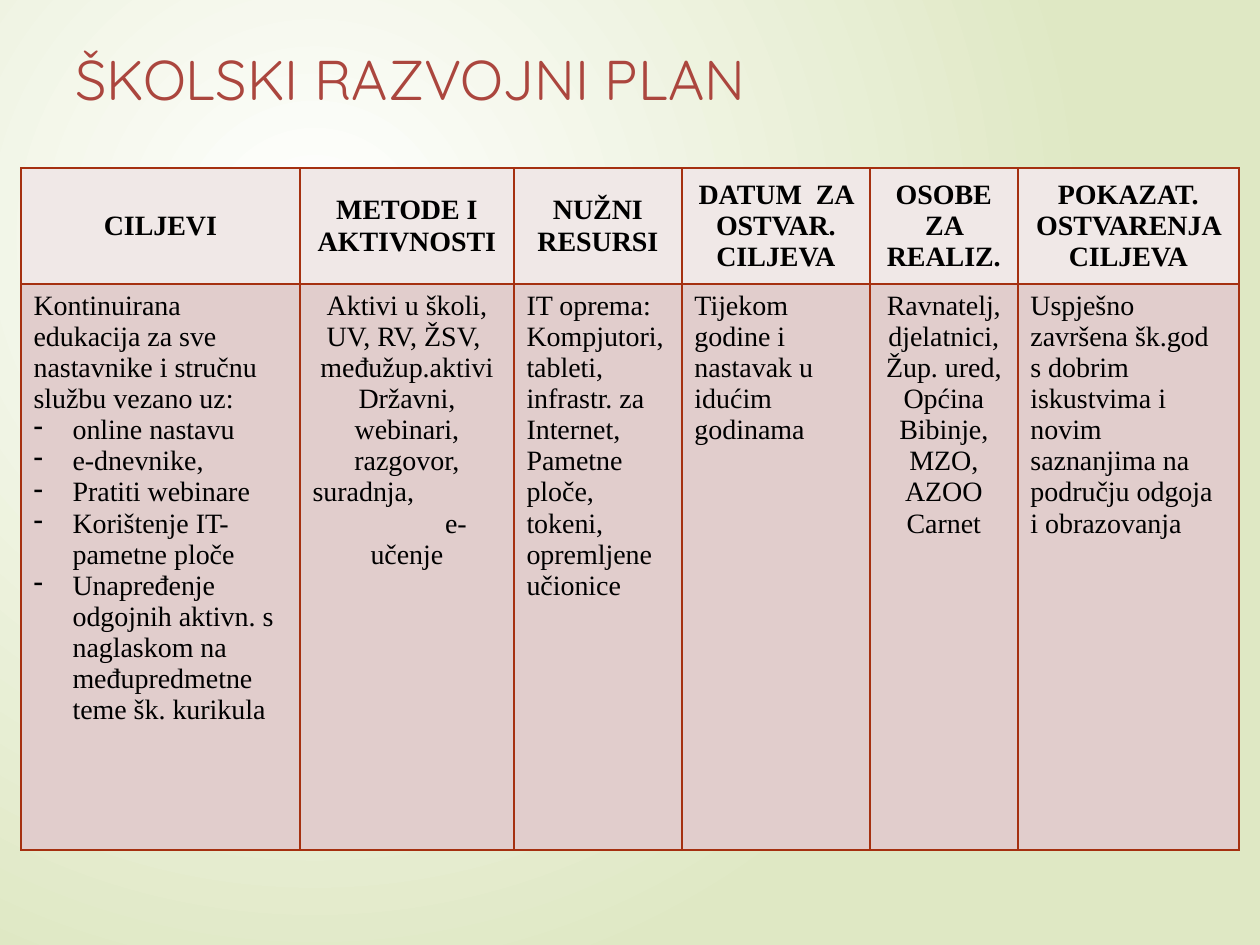
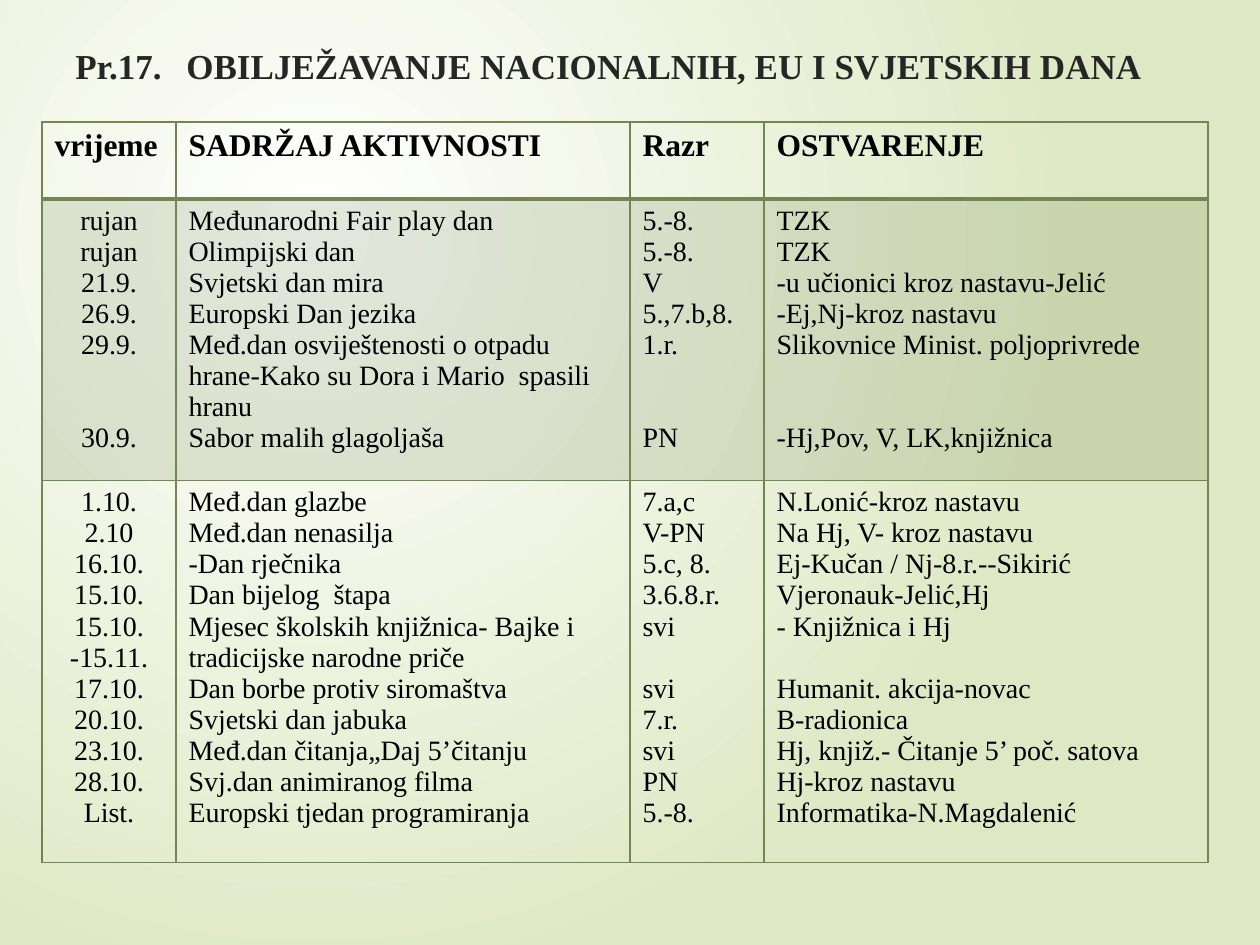
from lxml import etree
from pptx import Presentation
from pptx import util as u
from pptx.dml.color import RGBColor
from pptx.enum import text
from pptx.oxml.ns import qn

SERIF = "Times New Roman"
BODY_SIZE = 16
LINE_HEIGHT = 17.7  # points, one line of body text
CENTER = text.PP_ALIGN.CENTER


def px(length):
    return u.Emu(round(length * 914400 / 126))


def add_xml(parent, tag, **attributes):
    child = etree.SubElement(parent, qn(tag))
    for name, value in attributes.items():
        child.set(name, str(value))
    return child


# Contents: each cell is a list of paragraphs
plan_rows = [
    [["CILJEVI"], ["METODE I AKTIVNOSTI"], ["NUŽNI RESURSI"],
     ["DATUM  ZA OSTVAR. CILJEVA"], ["OSOBE", "ZA REALIZ."],
     ["POKAZAT. OSTVARENJA CILJEVA"]],
    [["Kontinuirana edukacija za sve nastavnike i stručnu službu vezano uz:",
      "online nastavu", "e-dnevnike,", "Pratiti webinare",
      "Korištenje IT-pametne ploče",
      "Unapređenje odgojnih aktivn. s naglaskom na međupredmetne teme šk. kurikula"],
     ["Aktivi u školi, UV, RV, ŽSV,  međužup.aktivi",
      "Državni, webinari, razgovor,", "suradnja,", "e-", "učenje"],
     ["IT oprema:", "Kompjutori, tableti, infrastr. za Internet,",
      "Pametne ploče, tokeni, opremljene učionice"],
     ["Tijekom godine i nastavak u idućim godinama"],
     ["Ravnatelj, djelatnici, Žup. ured, Općina Bibinje, MZO, AZOO Carnet"],
     ["Uspješno završena šk.god s dobrim iskustvima i novim saznanjima "
      "na području odgoja i obrazovanja"]],
]
days_rows = [
    [["vrijeme"], ["SADRŽAJ AKTIVNOSTI"], ["Razr"], ["OSTVARENJE"]],
    [["rujan", "rujan", "21.9.", "26.9.", "29.9.", "30.9."],
     ["Međunarodni Fair play dan", "Olimpijski dan", "Svjetski dan mira",
      "Europski Dan jezika",
      "Međ.dan osviještenosti o otpadu hrane-Kako su Dora i Mario  spasili hranu",
      "Sabor malih glagoljaša"],
     ["5.-8.", "5.-8.", "V", "5.,7.b,8.", "1.r.", "PN"],
     ["TZK", "TZK", "-u učionici kroz nastavu-Jelić", "-Ej,Nj-kroz nastavu",
      "Slikovnice Minist. poljoprivrede", "-Hj,Pov, V, LK,knjižnica"]],
    [["1.10.", "2.10", "16.10.", "15.10.", "15.10.", "-15.11.", "17.10.",
      "20.10.", "23.10.", "28.10.", "List."],
     ["Međ.dan glazbe", "Međ.dan nenasilja", "-Dan rječnika",
      "Dan bijelog  štapa",
      "Mjesec školskih knjižnica- Bajke i tradicijske narodne priče",
      "Dan borbe protiv siromaštva", "Svjetski dan jabuka",
      "Međ.dan čitanja„Daj 5’čitanju", "Svj.dan animiranog filma",
      "Europski tjedan programiranja"],
     ["7.a,c", "V-PN", "5.c, 8.", "3.6.8.r.", "svi", "svi", "7.r.", "svi",
      "PN", "5.-8."],
     ["N.Lonić-kroz nastavu", "Na Hj, V- kroz nastavu",
      "Ej-Kučan / Nj-8.r.--Sikirić", "Vjeronauk-Jelić,Hj",
      "- Knjižnica i Hj", "Humanit. akcija-novac", "B-radionica",
      "Hj, knjiž.- Čitanje 5’ poč. satova", "Hj-kroz nastavu",
      "Informatika-N.Magdalenić"]],
]

# fills: one (colour, opacity in percent) or None per row; centered: (row, column)
pages = [
    dict(title="ŠKOLSKI RAZVOJNI PLAN", title_font=("Quicksand", 32, "AB463E", False),
         rows=plan_rows, left=21, top=168, widths=[279, 214, 168, 188, 148, 221],
         heights=[116, 566], border="A53010", header_size=16, header_line=1,
         header_anchor=text.MSO_ANCHOR.MIDDLE,
         fills=[("F0E8E7", 100), ("E1CDCC", 100)],
         centered=[(0, column) for column in range(6)] + [(1, 1), (1, 4)]),
    dict(title="Pr.17.\tOBILJEŽAVANJE NACIONALNIH, EU I SVJETSKIH DANA",
         title_font=(SERIF, 20, "262626", True),
         rows=days_rows, left=42, top=122, widths=[134, 454, 134, 444],
         heights=[77, 262, 354], border="728653", header_size=18, header_line=2,
         header_anchor=text.MSO_ANCHOR.TOP,
         fills=[None, ("728653", 20), None],
         centered=[(1, 0), (2, 0)]),
]

presentation = Presentation()
presentation.slide_width, presentation.slide_height = px(1260), px(945)
tables = []

for page in pages:
    slide = presentation.slides.add_slide(presentation.slide_layouts[6])

    # Radial background
    fill = slide.background.fill
    fill.gradient()
    for stop, colour in zip(fill.gradient_stops, ("FFFFFF", "DFE8C4")):
        stop.color.rgb = RGBColor.from_string(colour)
    gradient = slide.element.find(".//" + qn("a:gradFill"))
    gradient.remove(gradient.find(qn("a:lin")))
    circle = add_xml(gradient, "a:path")
    circle.set("path", "circle")
    add_xml(circle, "a:fillToRect", l=50000, t=50000, r=100000, b=100000)

    # Title
    title = slide.shapes.add_textbox(px(63), px(38), px(1134), px(88))
    title.text_frame.word_wrap = True
    title.text_frame.text = page["title"]
    paragraph = title.text_frame.paragraphs[0]
    tab_list = add_xml(paragraph._p.get_or_add_pPr(), "a:tabLst")
    add_xml(tab_list, "a:tab", pos=px(111), algn="l")
    name, size, colour, bold = page["title_font"]
    for run in paragraph.runs:
        run.font.name, run.font.size, run.font.bold = name, u.Pt(size), bold
        run.font.color.rgb = RGBColor.from_string(colour)

    # Table
    rows, widths, heights = page["rows"], page["widths"], page["heights"]
    table = slide.shapes.add_table(len(rows), len(widths), px(page["left"]), px(page["top"]),
                                   px(sum(widths)), px(sum(heights))).table
    table.first_row = table.horz_banding = False
    tables.append(table)
    for column, width in zip(table.columns, widths):
        column.width = px(width)
    for row, height in zip(table.rows, heights):
        row.height = px(height)

    for r, row in enumerate(rows):
        for c, lines in enumerate(row):
            cell = table.cell(r, c)
            if r == 0:
                cell.vertical_anchor = page["header_anchor"]

            # Borders
            for side in ("L", "R", "T", "B"):
                heavy = (r, side) in ((0, "B"), (1, "T"))
                points = page["header_line"] if heavy else 1
                line = add_xml(cell._tc.get_or_add_tcPr(), "a:ln" + side, w=u.Pt(points))
                add_xml(add_xml(line, "a:solidFill"), "a:srgbClr", val=page["border"])

            # Fill
            if page["fills"][r]:
                colour, opacity = page["fills"][r]
                cell.fill.solid()
                cell.fill.fore_color.rgb = RGBColor.from_string(colour)
                if opacity < 100:
                    solid = cell._tc.tcPr.find(qn("a:solidFill"))
                    add_xml(solid[0], "a:alpha", val=opacity * 1000)
            else:
                cell.fill.background()

            # Text
            cell.text_frame.text = "\n".join(lines)
            for paragraph in cell.text_frame.paragraphs:
                if (r, c) in page["centered"]:
                    paragraph.alignment = CENTER
                for run in paragraph.runs:
                    run.font.name = SERIF
                    run.font.size = u.Pt(page["header_size"] if r == 0 else BODY_SIZE)
                    run.font.bold = r == 0
                    run.font.color.rgb = RGBColor.from_string("000000")

plan_table, days_table = tables

# Dashed list of goals
for paragraph in plan_table.cell(1, 0).text_frame.paragraphs[1:]:
    properties = paragraph._p.get_or_add_pPr()
    properties.set("marL", str(px(39)))
    properties.set("indent", str(px(-39)))
    add_xml(properties, "a:buChar", char="-")

# Staggered last lines of the methods
methods = plan_table.cell(1, 1).text_frame.paragraphs
methods[2].alignment = text.PP_ALIGN.LEFT
methods[3]._p.get_or_add_pPr().set("marL", str(px(98)))

# Gaps that keep the entries level with the wrapped activities
for r, columns, skipped in ((1, (0, 2, 3), 2), (2, (2, 3), 1)):
    for c in columns:
        entry = days_table.cell(r, c).text_frame.paragraphs[5]
        entry.space_before = u.Pt(skipped * LINE_HEIGHT)

presentation.save("out.pptx")
